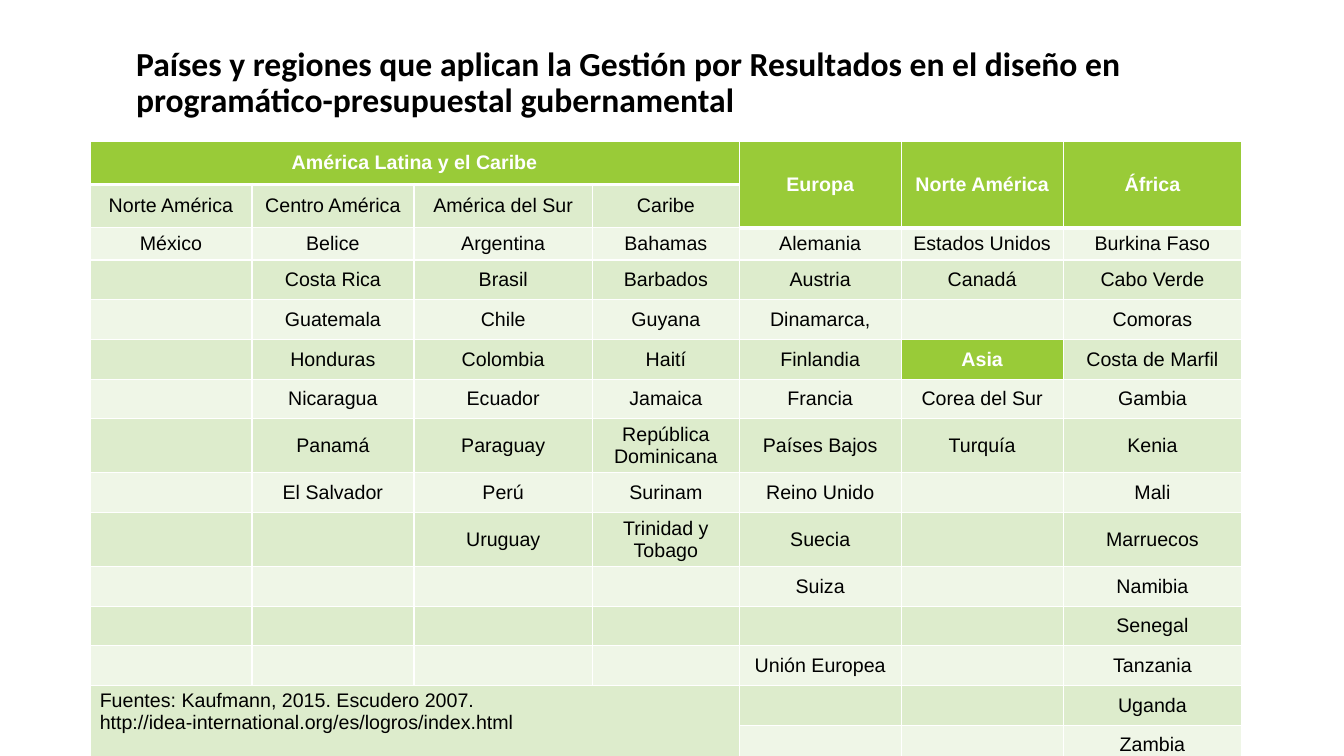
from pptx import Presentation
from pptx.dml.color import RGBColor
from pptx.enum.text import MSO_ANCHOR as Anchor, MSO_AUTO_SIZE as AutoSize, PP_ALIGN as Align
from pptx.oxml import parse_xml
from pptx.oxml.ns import nsdecls
from pptx.util import Pt

WHITE = RGBColor(0xFF, 0xFF, 0xFF)
BLACK = RGBColor(0, 0, 0)
GREEN = RGBColor(0x99, 0xCB, 0x38)
LIGHT_GREEN = RGBColor(0xDD, 0xEC, 0xCC)
PALE_GREEN = RGBColor(0xEF, 0xF6, 0xE7)

TITLE = ("Países y regiones que aplican la Gestión por Resultados en el diseño en "
         "programático-presupuestal gubernamental")
COLUMN_WIDTHS = [115.7, 115.7, 127.6, 104.8, 115.7, 115.7, 127.6]
ROW_HEIGHTS = [31, 31, 23] + [27.4] * 4 + [38.6, 27.4, 38.6] + [27.4] * 5
HEADINGS = {"América Latina y el Caribe", "Europa", "África", "Asia"}
SOURCES = "Fuentes: Kaufmann, 2015. Escudero 2007.\nhttp://idea-international.org/es/logros/index.html"
ROWS = [
    ["América Latina y el Caribe", "", "", "", "Europa", "Norte América", "África"],
    ["Norte América", "Centro América", "América del Sur", "Caribe", "", "", ""],
    ["México", "Belice", "Argentina", "Bahamas", "Alemania", "Estados Unidos", "Burkina Faso"],
    ["", "Costa Rica", "Brasil", "Barbados", "Austria", "Canadá", "Cabo Verde"],
    ["", "Guatemala", "Chile", "Guyana", "Dinamarca,", "", "Comoras"],
    ["", "Honduras", "Colombia", "Haití", "Finlandia", "Asia", "Costa de Marfil"],
    ["", "Nicaragua", "Ecuador", "Jamaica", "Francia", "Corea del Sur", "Gambia"],
    ["", "Panamá", "Paraguay", "República Dominicana", "Países Bajos", "Turquía", "Kenia"],
    ["", "El Salvador", "Perú", "Surinam", "Reino Unido", "", "Mali"],
    ["", "", "Uruguay", "Trinidad y Tobago", "Suecia", "", "Marruecos"],
    ["", "", "", "", "Suiza", "", "Namibia"],
    ["", "", "", "", "", "", "Senegal"],
    ["", "", "", "", "Unión Europea", "", "Tanzania"],
    [SOURCES, "", "", "", "", "", "Uganda"],
    ["", "", "", "", "", "", "Zambia"],
]
FIRST_COUNTRY_ROW = 2
LATIN_COLUMNS = 4
TIGHT_COLUMNS = {1, 2, 4, 6}


def bottom_width(row, column):
    """Border width in points: thick below the headings, thin elsewhere."""
    return 3 if row == 0 or (row == 1 and column >= LATIN_COLUMNS) else 1


def add_borders(cell, top, bottom):
    for side, width in (("L", 1), ("R", 1), ("T", top), ("B", bottom)):
        cell._tc.get_or_add_tcPr().append(parse_xml(
            f'<a:ln{side} {nsdecls("a")} w="{Pt(width)}"><a:solidFill>'
            f'<a:srgbClr val="{WHITE}"/></a:solidFill></a:ln{side}>'))


presentation = Presentation()
presentation.slide_width = Pt(960)
presentation.slide_height = Pt(540)
slide = presentation.slides.add_slide(presentation.slide_layouts[5])

title = slide.shapes.title
title.left, title.top, title.width, title.height = Pt(90), Pt(27), Pt(798), Pt(65.5)
title.text_frame.auto_size = AutoSize.NONE
title.text_frame.word_wrap = True
title.text_frame.vertical_anchor = Anchor.MIDDLE
paragraph = title.text_frame.paragraphs[0]
paragraph.alignment = Align.LEFT
paragraph.line_spacing = 0.9
run = paragraph.add_run()
run.text = TITLE
run.font.name = "Calibri"
run.font.size = Pt(24)
run.font.bold = True
run.font.color.rgb = BLACK

table = slide.shapes.add_table(
    len(ROWS), len(COLUMN_WIDTHS), Pt(64.3), Pt(100.8),
    Pt(sum(COLUMN_WIDTHS)), Pt(sum(ROW_HEIGHTS))).table
for column, width in zip(table.columns, COLUMN_WIDTHS):
    column.width = Pt(width)
for row, height in zip(table.rows, ROW_HEIGHTS):
    row.height = Pt(height)

last_row = len(ROWS) - 1
table.cell(0, 0).merge(table.cell(0, LATIN_COLUMNS - 1))
for column_index in range(LATIN_COLUMNS, len(COLUMN_WIDTHS)):
    table.cell(0, column_index).merge(table.cell(1, column_index))
table.cell(last_row - 1, 0).merge(table.cell(last_row, LATIN_COLUMNS - 1))

for row_index, texts in enumerate(ROWS):
    for column_index, text in enumerate(texts):
        cell = table.cell(row_index, column_index)
        heading = row_index == 0 or text in HEADINGS
        add_borders(cell, bottom_width(row_index - 1, column_index),
                    bottom_width(row_index, column_index))
        cell.fill.solid()
        band = LIGHT_GREEN if row_index % 2 else PALE_GREEN
        cell.fill.fore_color.rgb = GREEN if heading else band
        tight = FIRST_COUNTRY_ROW <= row_index < last_row and column_index in TIGHT_COLUMNS
        cell.margin_left = cell.margin_right = Pt(0.72 if tight else 7)
        cell.margin_top = cell.margin_bottom = Pt(0 if tight else 3.2)
        cell.vertical_anchor = Anchor.TOP if text == SOURCES else Anchor.MIDDLE
        if not text:
            continue
        for line_index, line in enumerate(text.split("\n")):
            frame = cell.text_frame
            paragraph = frame.add_paragraph() if line_index else frame.paragraphs[0]
            paragraph.alignment = Align.LEFT if text == SOURCES else Align.CENTER
            run = paragraph.add_run()
            run.text = line
            run.font.name = "Arial"
            run.font.size = Pt(14)
            run.font.bold = heading
            run.font.color.rgb = WHITE if heading else BLACK

presentation.save("out.pptx")
